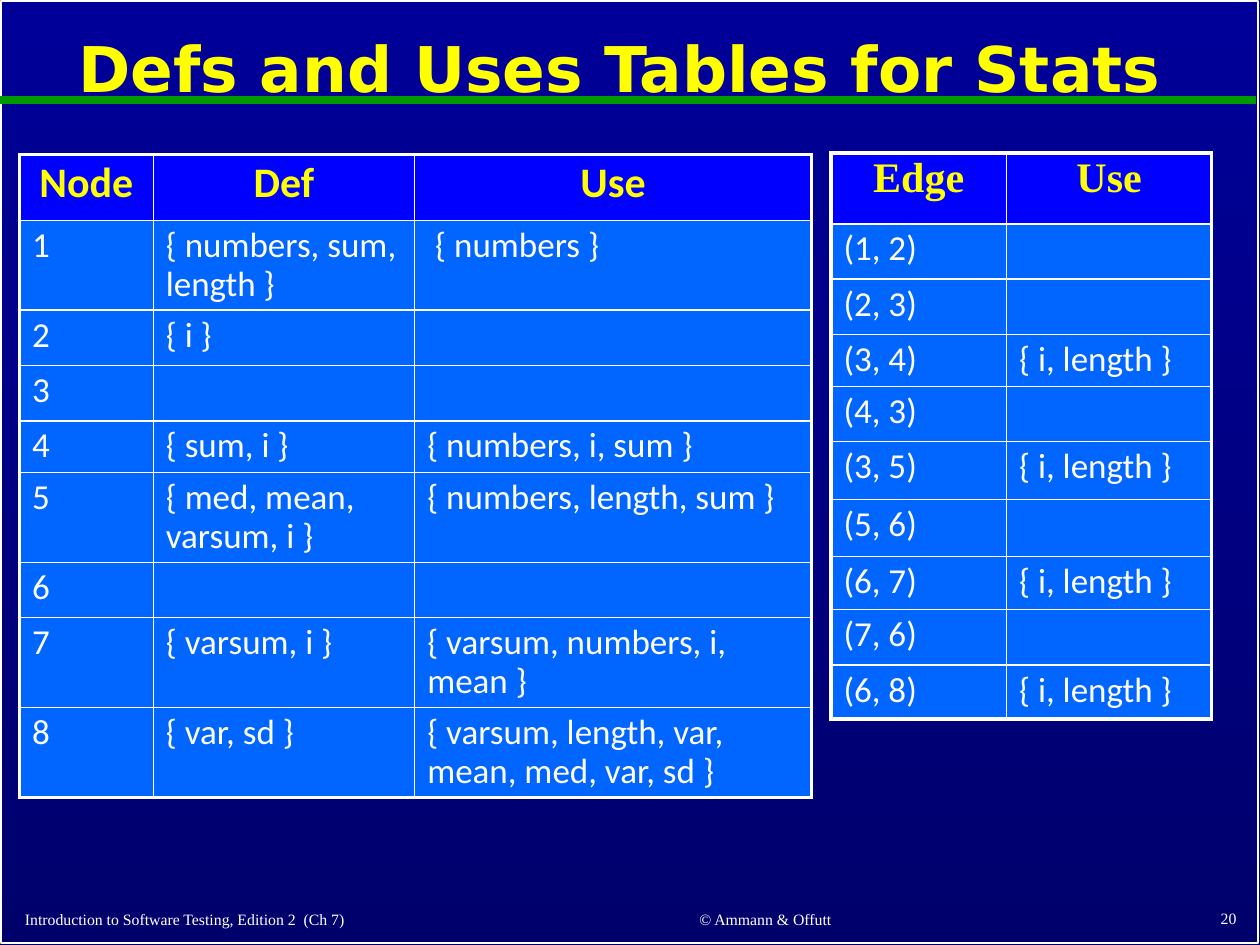
"""Build the slide with the defs and uses tables for Stats."""
from lxml import etree
from pptx import Presentation
from pptx.dml.color import RGBColor
from pptx.enum.shapes import MSO_CONNECTOR, MSO_SHAPE
from pptx.enum.text import MSO_ANCHOR, PP_ALIGN
from pptx.oxml.ns import qn
from pptx.util import Pt

LEFT, CENTER, RIGHT = PP_ALIGN.LEFT, PP_ALIGN.CENTER, PP_ALIGN.RIGHT
MIDDLE = MSO_ANCHOR.MIDDLE
RECTANGLE = MSO_SHAPE.RECTANGLE
STRAIGHT = MSO_CONNECTOR.STRAIGHT
COLORS = {
    "top": "000099", "bottom": "00006D", "rule": "009900", "text": "FFFFFF",
    "heading": "FFFF00", "header": "0000FF", "body": "0066FF",
}
SERIF, SANS, TITLE = "Times New Roman", "Calibri", "DejaVu Sans"


def style(para, align, size, face, color, bold=False):
    para.alignment = align
    para.font.size = Pt(size)
    para.font.name = face
    para.font.bold = bold
    para.font.color.rgb = RGBColor.from_string(COLORS[color])


def add_border(cell, side, width):
    line = etree.SubElement(cell._tc.get_or_add_tcPr(), qn(f"a:{side}"), w=str(Pt(width)))
    fill = etree.SubElement(line, qn("a:solidFill"))
    etree.SubElement(fill, qn("a:srgbClr"), val=COLORS["text"])


deck = Presentation()
deck.slide_width, deck.slide_height = Pt(720), Pt(540)
page = deck.slides.add_slide(deck.slide_layouts[6])

backdrop = page.background.fill
backdrop.gradient()
backdrop.gradient_angle = 270
for stop, name in zip(backdrop.gradient_stops, ("top", "bottom")):
    stop.color.rgb = RGBColor.from_string(COLORS[name])

frame = page.shapes.add_shape(RECTANGLE, Pt(0.72), Pt(0.72), Pt(718), Pt(538))
frame.shadow.inherit = False
frame.fill.background()
frame.line.color.rgb = RGBColor.from_string(COLORS["text"])
frame.line.width = Pt(1)

rule = page.shapes.add_connector(STRAIGHT, Pt(0), Pt(57.4), Pt(718), Pt(57.4))
rule.line.color.rgb = RGBColor.from_string(COLORS["rule"])
rule.line.width = Pt(4.5)
etree.SubElement(rule._element.spPr, qn("a:effectLst"))

texts = [
    ("Introduction to Software Testing, Edition 2  (Ch 7)",
     (7.2, 515.5, 296, 19), LEFT, 9, SERIF, "text", False),
    ("© Ammann & Offutt", (323.3, 515.5, 228, 19), CENTER, 9, SERIF, "text", False),
    ("20", (563.8, 515, 149.8, 19), RIGHT, 9, SERIF, "text", False),
    ("Defs and Uses Tables for Stats ", (5.8, 8, 709, 66), CENTER, 36, TITLE, "heading", True),
]
for text, area, *look in texts:
    box = page.shapes.add_textbox(*map(Pt, area))
    box.text_frame.word_wrap = True
    box.text_frame.vertical_anchor = MIDDLE
    para = box.text_frame.paragraphs[0]
    para.text = text
    style(para, *look)
    if text.startswith("Defs"):
        para.line_spacing = 0.9

node_rows = [
    ("Node", "Def", "Use"),
    ("1", "{ numbers, sum, length }", " { numbers }"),
    ("2", "{ i }", ""),
    ("3", "", ""),
    ("4", "{ sum, i }", "{ numbers, i, sum }"),
    ("5", "{ med, mean, varsum, i }", "{ numbers, length, sum }"),
    ("6", "", ""),
    ("7", "{ varsum, i }", "{ varsum, numbers, i, mean }"),
    ("8", "{ var, sd }", "{ varsum, length, var, mean, med, var, sd }"),
]
edge_rows = [
    ("Edge", "Use"),
    ("(1, 2)", ""),
    ("(2, 3)", ""),
    ("(3, 4)", "{ i, length }"),
    ("(4, 3)", ""),
    ("(3, 5)", "{ i, length }"),
    ("(5, 6)", ""),
    ("(6, 7)", "{ i, length }"),
    ("(7, 6)", ""),
    ("(6, 8)", "{ i, length }"),
]
tables = [
    (node_rows, 11.2, 88.2, SANS, (76.4, 149.4, 226.8),
     (37.7, 51.4, 31.6, 31.6, 29.6, 51.4, 31.6, 51.4, 51.4)),
    (edge_rows, 474.8, 87.4, SERIF, (100.4, 117.2),
     (40.5, 31.6, 31.7, 29.6, 31.7, 33.1, 32.4, 30.5, 31.6, 31)),
]
for rows, left, top, header_face, widths, heights in tables:
    holder = page.shapes.add_table(len(rows), len(widths), Pt(left), Pt(top),
                                   Pt(sum(widths)), Pt(sum(heights)))
    table = holder.table
    table.horz_banding = False
    for column, width in zip(table.columns, widths):
        column.width = Pt(width)
    for row, height in zip(table.rows, heights):
        row.height = Pt(height)
    last_row, last_column = len(rows) - 1, len(widths) - 1
    for r, values in enumerate(rows):
        for c, value in enumerate(values):
            cell = table.cell(r, c)
            para = cell.text_frame.paragraphs[0]
            if value:
                para.text = value
            para.line_spacing = 0.9
            if r == 0:
                style(para, CENTER, 24, header_face, "heading", True)
            else:
                style(para, LEFT, 20, SANS, "text")
            outer = {"lnL": c == 0, "lnR": c == last_column,
                     "lnT": r == 0, "lnB": r == last_row}
            for side, is_outer in outer.items():
                add_border(cell, side, 2.25 if is_outer else 1)
            cell.fill.solid()
            cell.fill.fore_color.rgb = RGBColor.from_string(COLORS["body" if r else "header"])

deck.save("out.pptx")
